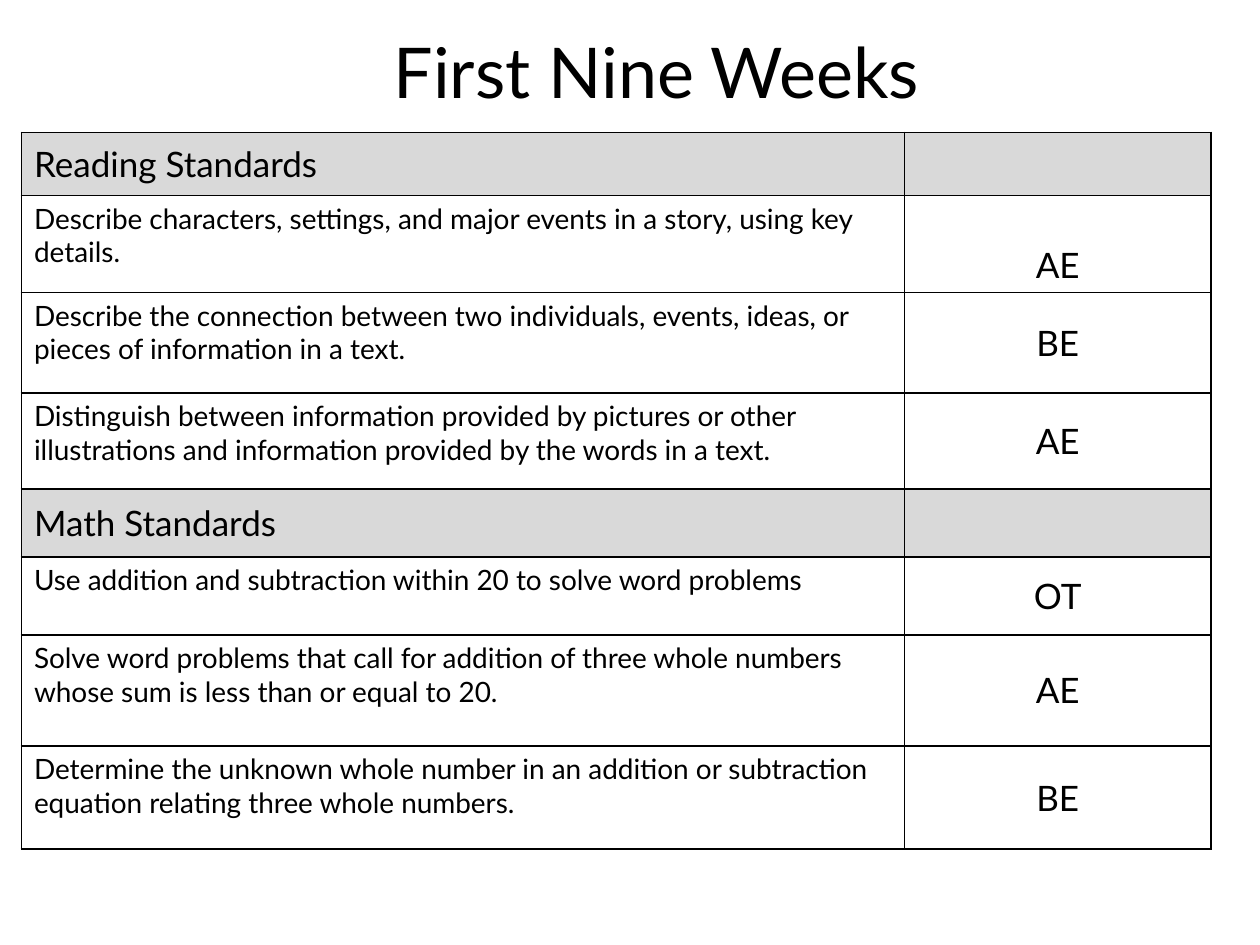
from lxml import etree
from pptx import Presentation
from pptx.dml.color import RGBColor
from pptx.enum import text as t
from pptx.oxml import ns
from pptx.util import Inches, Pt

FONT = "Lato"
COLORS = {"ink": "000000", "head": "D9D9D9", "body": "FFFFFF"}
COLS = [7.01, 2.43]
# Row height, standard, mark; a row without a mark is a heading
ROWS = [
    (0.5, "Reading Standards", ""),
    (0.77, "Describe characters, settings, and major events in a story, "
           "using key details.", "AE"),
    (0.8, "Describe the connection between two individuals, events, ideas, "
          "or pieces of information in a text.", "BE"),
    (0.76, "Distinguish between information provided by pictures or other "
           "illustrations and information provided by the words in a text.", "AE"),
    (0.54, "Math Standards", ""),
    (0.62, "Use addition and subtraction within 20 to solve word problems", "OT"),
    (0.88, "Solve word problems that call for addition of three whole numbers "
           "whose sum is less than or equal to 20.", "AE"),
    (0.82, "Determine the unknown whole number in an addition or subtraction "
           "equation relating three whole numbers.", "BE"),
]
LOW_ROW = 1  # its mark sits at the foot of the cell


def write(frame, words, size, align):
    frame.text = words
    par = frame.paragraphs[0]
    par.alignment = align
    for run in par.runs:
        run.font.name = FONT
        run.font.size = Pt(size)
        run.font.color.rgb = RGBColor.from_string(COLORS["ink"])


def add_title(slide, words):
    box = slide.shapes.add_textbox(Inches(1.56), Inches(0.18), Inches(7.3), Inches(0.77))
    box.text_frame.word_wrap = True
    write(box.text_frame, words, 40, t.PP_ALIGN.CENTER)


def set_border(cell):
    """Draw a thin line on all four sides; call before the fill is set."""
    props = cell._tc.get_or_add_tcPr()
    for side in ("a:lnL", "a:lnR", "a:lnT", "a:lnB"):
        line = etree.SubElement(props, ns.qn(side), w=str(Pt(1)))
        fill = etree.SubElement(line, ns.qn("a:solidFill"))
        etree.SubElement(fill, ns.qn("a:srgbClr"), val=COLORS["ink"])


def fill_cell(cell, words, size, align, anchor, color):
    set_border(cell)
    cell.fill.solid()
    cell.fill.fore_color.rgb = RGBColor.from_string(COLORS[color])
    cell.vertical_anchor = anchor
    write(cell.text_frame, words, size, align)


def add_grid(slide):
    high = sum(row[0] for row in ROWS)
    grid = slide.shapes.add_table(len(ROWS), len(COLS), Inches(0.17), Inches(1.05),
                                  Inches(sum(COLS)), Inches(high)).table
    grid.first_row = grid.horz_banding = False
    for col, width in zip(grid.columns, COLS):
        col.width = Inches(width)
    left, mid = t.PP_ALIGN.LEFT, t.PP_ALIGN.CENTER
    top, center, low = t.MSO_ANCHOR.TOP, t.MSO_ANCHOR.MIDDLE, t.MSO_ANCHOR.BOTTOM
    for i, (height, words, mark) in enumerate(ROWS):
        grid.rows[i].height = Inches(height)
        color = "body" if mark else "head"
        fill_cell(grid.cell(i, 0), words, 16 if mark else 20, left,
                  top if mark else center, color)
        fill_cell(grid.cell(i, 1), mark, 20, mid,
                  low if i == LOW_ROW else center, color)


def main():
    deck = Presentation()
    deck.slide_width, deck.slide_height = Inches(10), Inches(7.5)
    slide = deck.slides.add_slide(deck.slide_layouts[6])
    add_grid(slide)
    add_title(slide, "First Nine Weeks")
    deck.save("out.pptx")


if __name__ == "__main__":
    main()
